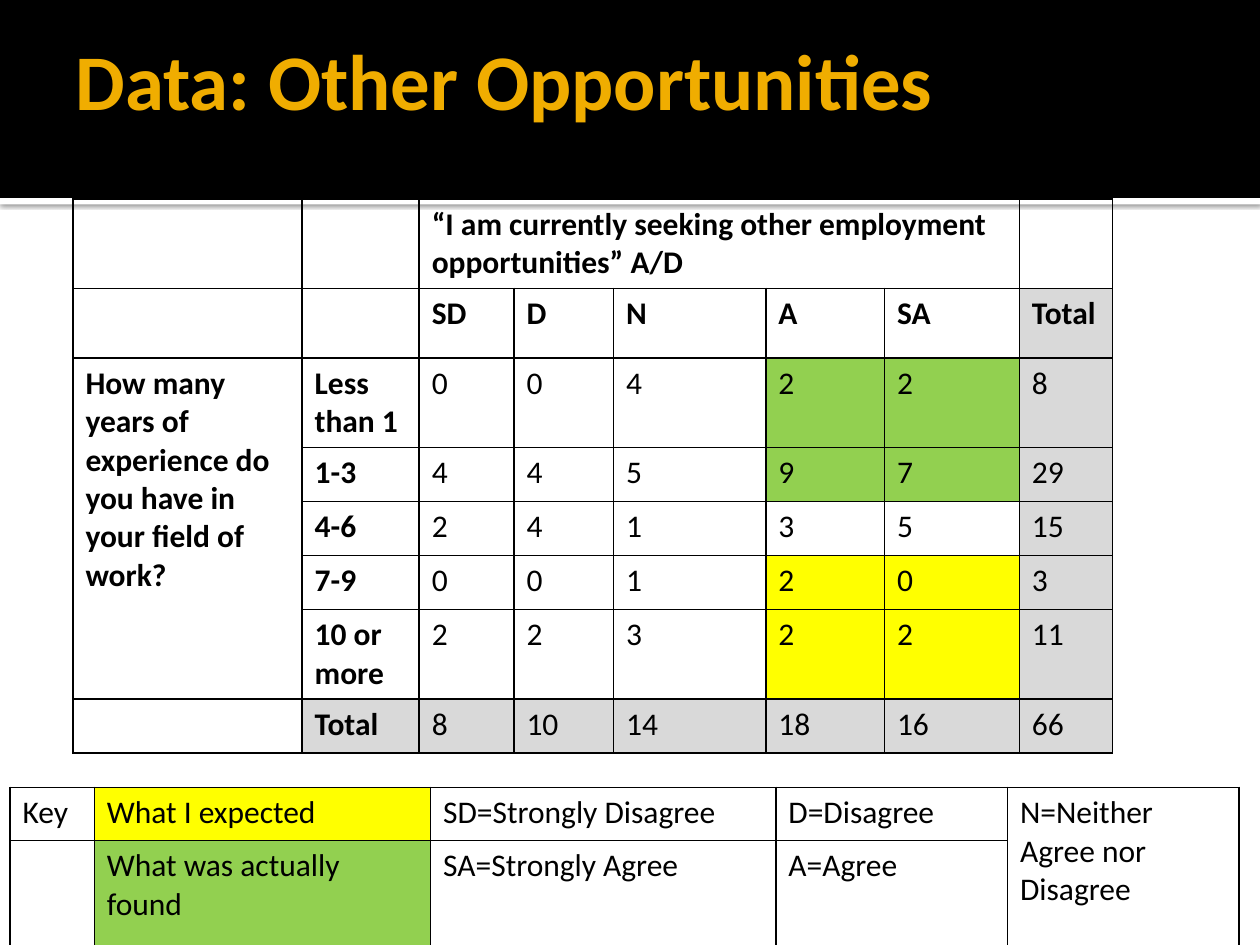
from lxml.etree import SubElement
from pptx import Presentation
from pptx.dml.color import RGBColor
from pptx.enum.shapes import MSO_SHAPE
from pptx.enum.text import MSO_ANCHOR, PP_ALIGN
from pptx.oxml.ns import qn
from pptx.util import Cm, Pt

COLORS = {"black": "000000", "white": "FFFFFF", "title": "F0AD00",
          "total": "D9D9D9", "found": "92D050", "expected": "FFFF00"}
FONT = "Calibri"
TITLE = "Data: Other Opportunities"

SURVEY = {
    "at": (1.47, 4.01),
    "cols": [4.62, 2.36, 1.91, 2.01, 3.07, 2.39, 2.72, 1.88],
    "rows": [1.7, 1.4, 1.09, 1.09, 1.09, 1.09, 1.55, 1.09],
    "cells": [
        ["", "", "“I am currently seeking other employment opportunities” A/D", "", "", "", "", ""],
        ["", "", "SD", "D", "N", "A", "SA", "Total"],
        ["How many years of experience do you have in your field of work?",
         "Less than 1", 0, 0, 4, 2, 2, 8],
        ["", "1-3", 4, 4, 5, 9, 7, 29],
        ["", "4-6", 2, 4, 1, 3, 5, 15],
        ["", "7-9", 0, 0, 1, 2, 0, 3],
        ["", "10 or more", 2, 2, 3, 2, 2, 11],
        ["", "Total", 8, 10, 14, 18, 16, 66],
    ],
    "merges": [((0, 2), (0, 6)), ((2, 0), (6, 0))],
    # (first row, first column, last row, last column, colour)
    "fills": [(1, 7, 7, 7, "total"), (7, 1, 7, 7, "total"),
              (2, 5, 3, 6, "found"), (5, 5, 6, 6, "expected")],
    "bold": lambda r, c: r < 2 or c < 2,
}
KEY = {
    "at": (0.2, 15.87),
    "cols": [1.7, 6.78, 6.96, 4.67, 4.67],
    "rows": [1.07, 2.2],
    "cells": [
        ["Key", "What I expected", "SD=Strongly Disagree", "D=Disagree",
         "N=Neither Agree nor Disagree"],
        ["", "What was actually found", "SA=Strongly Agree", "A=Agree", ""],
    ],
    "merges": [((0, 4), (1, 4))],
    "fills": [(0, 1, 0, 1, "expected"), (1, 1, 1, 1, "found")],
    "bold": lambda r, c: False,
}


def rgb(name):
    return RGBColor.from_string(COLORS[name])


def format_font(font, size, color, bold):
    values = {"name": FONT, "size": Pt(size), "bold": bold}
    for name, value in values.items():
        setattr(font, name, value)
    font.color.rgb = rgb(color)


def add_band(s, top, height, color):
    """Add a full-width band behind the title."""
    sp = s.shapes.add_shape(MSO_SHAPE.RECTANGLE, 0, Cm(top), prs.slide_width, Cm(height))
    sp.shadow.inherit = False
    sp.fill.solid()
    sp.fill.fore_color.rgb = rgb(color)
    sp.line.fill.background()
    s.shapes.title.element.addprevious(sp.element)
    return sp


def add_shadow(sp):
    effects = sp.element.spPr.find(qn("a:effectLst"))
    shadow = SubElement(effects, qn("a:outerShdw"), blurRad=str(Pt(2.5)),
                        dist=str(Pt(0.8)), dir="5400000", rotWithShape="0")
    color = SubElement(shadow, qn("a:srgbClr"), val=COLORS["black"])
    SubElement(color, qn("a:alpha"), val="60000")


def add_borders(cell):
    tcPr = cell._tc.get_or_add_tcPr()
    for i, side in enumerate(("lnL", "lnR", "lnT", "lnB")):
        ln = tcPr.makeelement(qn(f"a:{side}"), {"w": str(Pt(1))})
        fill = SubElement(ln, qn("a:solidFill"))
        SubElement(fill, qn("a:srgbClr"), val=COLORS["black"])
        tcPr.insert(i, ln)


def add_grid(s, data):
    left, top = data["at"]
    cols, rows = data["cols"], data["rows"]
    table = s.shapes.add_table(len(rows), len(cols), Cm(left), Cm(top),
                               Cm(sum(cols)), Cm(sum(rows))).table
    table.first_row = table.horz_banding = False
    for col, width in zip(table.columns, cols):
        col.width = Cm(width)
    for row, height in zip(table.rows, rows):
        row.height = Cm(height)
    for r, texts in enumerate(data["cells"]):
        for c, text in enumerate(texts):
            cell = table.cell(r, c)
            cell.fill.background()
            add_borders(cell)
            p = cell.text_frame.paragraphs[0]
            if text != "":
                p.text = str(text)
                format_font(p.runs[0].font, 18, "black", data["bold"](r, c))
    for r1, c1, r2, c2, color in data["fills"]:
        for r in range(r1, r2 + 1):
            for c in range(c1, c2 + 1):
                fill = table.cell(r, c).fill
                fill.solid()
                fill.fore_color.rgb = rgb(color)
    for first, last in data["merges"]:
        table.cell(*first).merge(table.cell(*last))


prs = Presentation()
prs.slide_width, prs.slide_height = Cm(25.4), Cm(19.05)
s = prs.slides.add_slide(prs.slide_layouts[5])

add_shadow(add_band(s, 3.99, 0.13, "white"))
add_band(s, 0, 3.99, "black")

title = s.shapes.title
title.left, title.top, title.width, title.height = Cm(1.27), 0, Cm(22.86), Cm(3.18)
tf = title.text_frame
tf.text = TITLE
frame = {"vertical_anchor": MSO_ANCHOR.MIDDLE, "word_wrap": True,
         "margin_left": Cm(0.25), "margin_right": Cm(0.13),
         "margin_top": Cm(0.13), "margin_bottom": Cm(0.13)}
for name, value in frame.items():
    setattr(tf, name, value)
p = tf.paragraphs[0]
p.alignment = PP_ALIGN.LEFT
format_font(p.runs[0].font, 45, "title", True)

for data in (SURVEY, KEY):
    add_grid(s, data)

prs.save("out.pptx")
